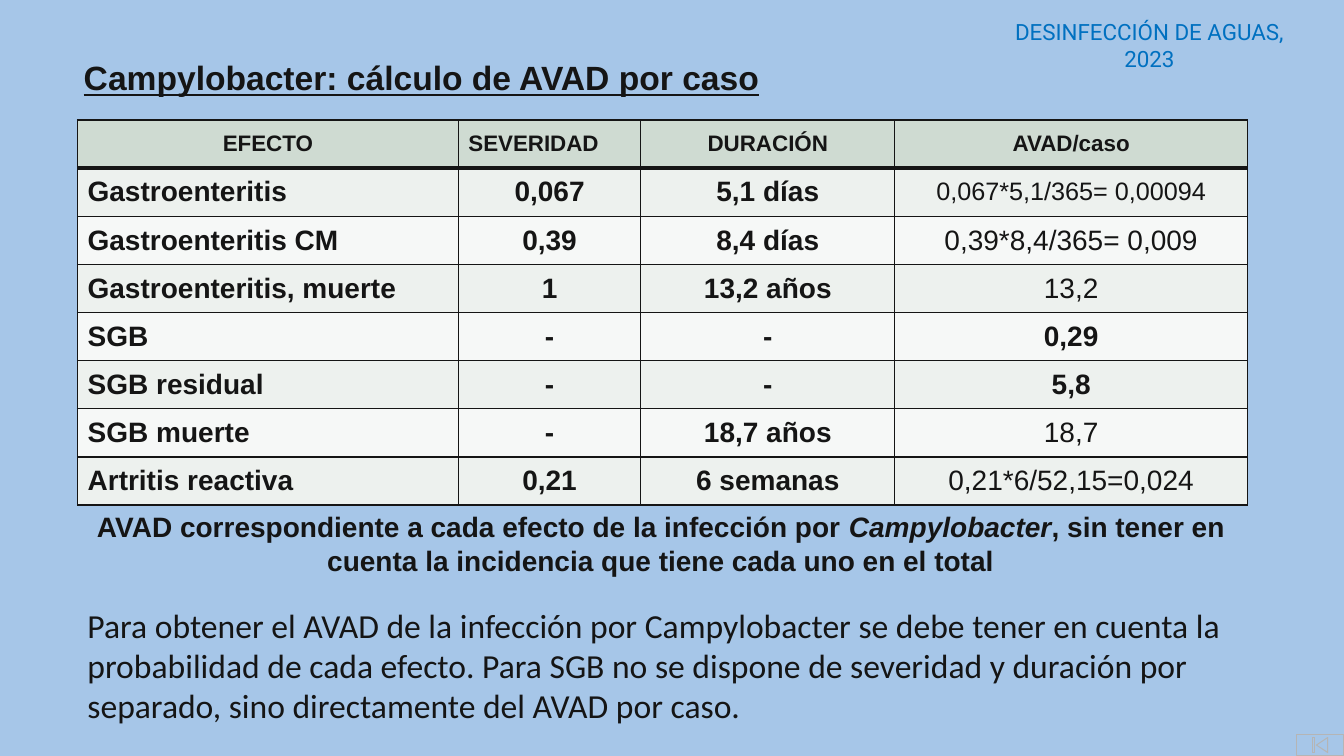
"""Build the slide on the Campylobacter burden per case."""
from pptx import Presentation
from pptx.dml.color import RGBColor
from pptx.enum.shapes import MSO_SHAPE
from pptx.enum.text import MSO_ANCHOR, MSO_AUTO_SIZE, PP_ALIGN
from pptx.oxml.ns import qn
from pptx.util import Pt
from lxml.etree import SubElement

INK = "151515"
HEAD = "CFDBD2"
BANDS = ["EDF1EE", "F6F8F7"]
TITLE = "Campylobacter: cálculo de AVAD por caso"
COURSE = "DESINFECCIÓN DE AGUAS, 2023"
CAPTION = [
    ("AVAD correspondiente a cada efecto de la infección por ", False),
    ("Campylobacter", True),
    (", sin tener en cuenta la incidencia que tiene cada uno en el total", False),
]
NOTE = (
    "Para obtener el AVAD de la infección por Campylobacter se debe tener en cuenta "
    "la probabilidad de cada efecto. Para SGB no se dispone de severidad y duración "
    "por separado, sino directamente del AVAD por caso."
)
ROWS = [
    ("EFECTO", "SEVERIDAD", "DURACIÓN", "AVAD/caso"),
    ("Gastroenteritis", "0,067", "5,1 días", "0,067*5,1/365= 0,00094"),
    ("Gastroenteritis CM", "0,39", "8,4 días", "0,39*8,4/365= 0,009"),
    ("Gastroenteritis, muerte", "1", "13,2 años", "13,2"),
    ("SGB", "-", "-", "0,29"),
    ("SGB residual", "-", "-", "5,8"),
    ("SGB muerte", "-", "18,7 años", "18,7"),
    ("Artritis reactiva", "0,21", "6 semanas", "0,21*6/52,15=0,024"),
]
GIVEN = {"0,29", "5,8"}
LONG = 20
WIDTHS = [272, 130.4, 181.4, 252]
ROW_H = 34.4
LEFT, TOP = 55.4, 85.7


def color(text):
    return RGBColor.from_string(text)


def style(par, size, face="Arial", ink=INK, bold=False, align=PP_ALIGN.CENTER):
    par.alignment = align
    for run in par.runs:
        font = run.font
        font.size, font.name, font.bold = Pt(size), face, bold
        font.color.rgb = color(ink)


def place(shape, left, top, width, height):
    shape.left, shape.top = Pt(left), Pt(top)
    shape.width, shape.height = Pt(width), Pt(height)


def add_text(slide, *box):
    frame = slide.shapes.add_textbox(*map(Pt, box)).text_frame
    frame.word_wrap = True
    return frame


def edge(cell, widths):
    props = cell._tc.get_or_add_tcPr()
    for side, width in zip("LRTB", widths):
        line = SubElement(props, qn(f"a:ln{side}"), w=str(Pt(width)))
        fill = SubElement(line, qn("a:solidFill"))
        SubElement(fill, qn("a:srgbClr"), val=INK)


def add_grid(slide):
    box = LEFT, TOP, sum(WIDTHS), ROW_H * len(ROWS)
    grid = slide.shapes.add_table(len(ROWS), len(WIDTHS), *map(Pt, box)).table
    for col, width in zip(grid.columns, WIDTHS):
        col.width = Pt(width)
    for r, row in enumerate(ROWS):
        grid.rows[r].height = Pt(ROW_H)
        for c, text in enumerate(row):
            cell = grid.cell(r, c)
            cell.text_frame.text = text
            cell.vertical_anchor = MSO_ANCHOR.MIDDLE
            edge(cell, (1, 1, 3 if r == 1 else 1, 3 if r == 0 else 1))
            cell.fill.solid()
            cell.fill.fore_color.rgb = color(BANDS[(r - 1) % 2] if r else HEAD)
            size = 16 if r == 0 else 18 if len(text) > LONG and c else 20
            bold = r == 0 or c < 3 or text in GIVEN
            left = c == 0 if r else c == 1
            align = PP_ALIGN.LEFT if left else PP_ALIGN.CENTER
            style(cell.text_frame.paragraphs[0], size, bold=bold, align=align)


def main():
    deck = Presentation()
    deck.slide_width, deck.slide_height = Pt(960), Pt(540)
    slide = deck.slides.add_slide(deck.slide_layouts[5])
    slide.background.fill.solid()
    slide.background.fill.fore_color.rgb = color("A6C6E8")

    button = slide.shapes.add_shape(
        MSO_SHAPE.ACTION_BUTTON_BEGINNING, Pt(926), Pt(525), Pt(34), Pt(14.4))
    button.shadow.inherit = False
    button.fill.background()
    button.line.color.rgb = color("B5B5B5")
    button.line.width = Pt(0.75)

    course = add_text(slide, 707, 9.4, 228, 27)
    course.text = COURSE
    style(course.paragraphs[0], 16, "Roboto", "0070C0")

    add_grid(slide)

    caption = add_text(slide, 52.6, 360.7, 838.8, 55.4).paragraphs[0]
    for text, slant in CAPTION:
        run = caption.add_run()
        run.text = text
        run.font.italic = slant
    style(caption, 20, bold=True)

    note = add_text(slide, LEFT, 428.4, 836, 94.3)
    note.text = NOTE
    style(note.paragraphs[0], 24, "Calibri", align=PP_ALIGN.LEFT)

    title = slide.shapes.title
    place(title, 52.6, 37.4, 605, 36)
    frame = title.text_frame
    frame.text = TITLE
    frame.word_wrap = True
    frame.auto_size = MSO_AUTO_SIZE.NONE
    frame.vertical_anchor = MSO_ANCHOR.MIDDLE
    style(frame.paragraphs[0], 24, bold=True, align=PP_ALIGN.LEFT)
    frame.paragraphs[0].runs[0].font.underline = True

    deck.save("out.pptx")


if __name__ == "__main__":
    main()
